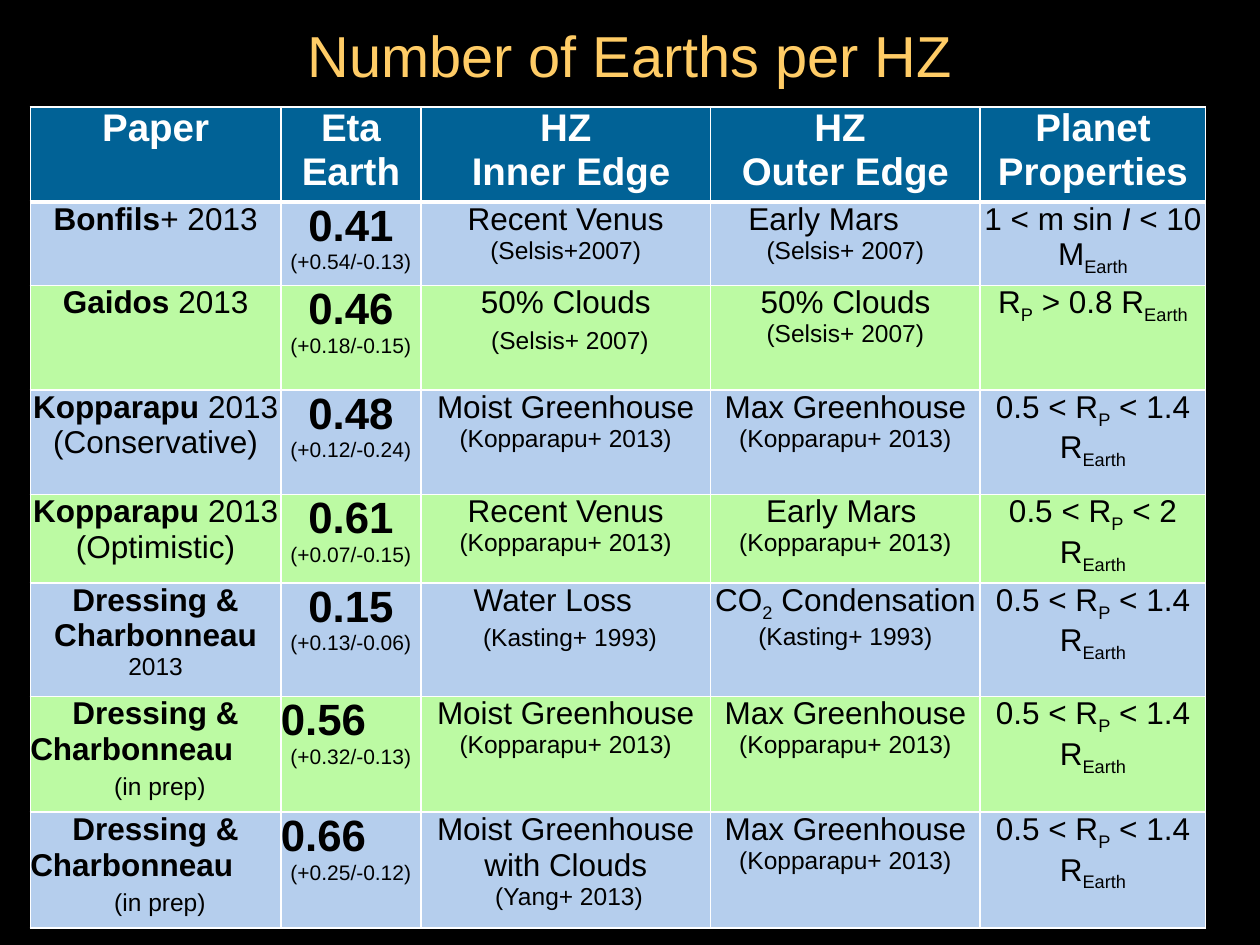
from lxml import etree
from pptx import Presentation
from pptx.dml.color import RGBColor
from pptx.enum.text import MSO_ANCHOR, PP_ALIGN
from pptx.oxml.ns import qn
from pptx.util import Inches, Pt

CENTER, LEFT = PP_ALIGN.CENTER, PP_ALIGN.LEFT
MIDDLE = MSO_ANCHOR.MIDDLE

TITLE = "Number of Earths per HZ"
HEADS = ["Paper", "Eta Earth", "HZ\n Inner Edge", "HZ \nOuter Edge", "Planet Properties"]
SMALL = "0.5 < R|_P| < 1.4 R|_Earth"
MOIST = "Moist Greenhouse\n~(Kopparapu+ 2013)"
MAX = "Max Greenhouse\n~(Kopparapu+ 2013)"
PREP = "*Dressing &\n*Charbonneau\n* |~(in prep)"

# Run marks: * bold, _ subscript, / italic, ~ reference, ^ value, ! error
ROWS = [
    ["*Bonfils|+ 2013", "^0.41\n!(+0.54/-0.13)", "Recent Venus\n~(Selsis+2007)",
     "Early Mars\n~(Selsis+ 2007)", "1 < m sin |/I |< 10 M|_Earth"],
    ["*Gaidos| 2013", "^0.46\n!(+0.18/-0.15)", "50% Clouds\n |~(Selsis+ 2007)",
     "50% Clouds\n~(Selsis+ 2007)", "R|_P| > 0.8 R|_Earth"],
    ["*Kopparapu| 2013 (Conservative)", "^0.48\n!(+0.12/-0.24)", MOIST, MAX, SMALL],
    ["*Kopparapu| 2013 (Optimistic)", "^0.61\n!(+0.07/-0.15)",
     "Recent Venus\n~(Kopparapu+ 2013)", "Early Mars\n~(Kopparapu+ 2013)",
     "0.5 < R|_P| < 2 R|_Earth"],
    ["*Dressing & Charbonneau |~2013", "^0.15\n!(+0.13/-0.06)",
     "Water Loss\n |~(Kasting+ 1993)",
     "CO|_2| Condensation\n~(Kasting+ 1993)", SMALL],
    [PREP, "^0.56\n!(+0.32/-0.13)", MOIST, MAX, SMALL],
    [PREP, "^0.66\n!(+0.25/-0.12)",
     "Moist Greenhouse with Clouds\n~ (Yang+ 2013)", MAX, SMALL],
]
SHIFTS = {(1, 3, 0): 0.3, (4, 3, 0): 0.44, (5, 2, 0): 0.42,
          (6, 0, 1): 0, (6, 1, 0): 0, (7, 0, 1): 0, (7, 1, 0): 0}
WIDTHS = [1.99, 1.11, 2.3, 2.14, 1.79]
HEIGHTS = [0.73, 0.62, 0.83, 0.83, 0.62, 0.9, 0.9, 0.91]
FILLS = ["BCFAA3", "B5CEED"]
STYLES = {"*": {"size": 18, "bold": True}, "_": {"size": 18},
          "/": {"size": 18, "italic": True}, "~": {"size": 14},
          "^": {"size": 25, "bold": True}, "!": {"size": 12}}
BODY = {"size": 18}
HEAD = {"size": 22, "bold": True}


def paint(tint):
    return RGBColor.from_string(tint)


def add_run(para, text, style, tint):
    run = para.add_run()
    run.text = text
    form = {"name": "Arial", "bold": False, "italic": False, **style}
    form["size"] = Pt(form["size"])
    for key, value in form.items():
        setattr(run.font, key, value)
    run.font.color.rgb = paint(tint)
    return run


def add_edge(cell, side, place, width):
    line = etree.Element(qn("a:ln" + side), w=str(Pt(width)))
    fill = etree.SubElement(line, qn("a:solidFill"))
    etree.SubElement(fill, qn("a:srgbClr"), val="FFFFFF")
    cell._tc.get_or_add_tcPr().insert(place, line)


def fill_cell(cell, text, row, col):
    form = {"margin_left": 0, "margin_right": 0, "margin_top": 0,
            "margin_bottom": Inches(0.02)}
    for key, value in form.items():
        setattr(cell, key, value)
    cell.fill.solid()
    cell.fill.fore_color.rgb = paint(FILLS[row % 2] if row else "016296")
    for place, side in enumerate("LRTB"):
        thick = (row, side) in [(0, "B"), (1, "T")]
        add_edge(cell, side, place, 3 if thick else 1)
    frame = cell.text_frame
    for num, line in enumerate(text.split("\n")):
        para = frame.add_paragraph() if num else frame.paragraphs[0]
        shift = SHIFTS.get((row, col, num))
        para.alignment = CENTER if shift is None else LEFT
        if shift:
            para._p.get_or_add_pPr().set("marL", str(Inches(shift)))
        for part in line.split("|"):
            mark = part[0]
            if row == 0:
                add_run(para, part, HEAD, "FFFFFF")
            elif mark in STYLES:
                run = add_run(para, part[1:], STYLES[mark], "000000")
                if mark == "_":
                    run._r.get_or_add_rPr().set("baseline", "-25000")
            else:
                add_run(para, part, BODY, "000000")


def main():
    deck = Presentation()
    deck.slide_width, deck.slide_height = Inches(10), Inches(7.5)
    slide = deck.slides.add_slide(deck.slide_layouts[6])
    back = slide.background.fill
    back.solid()
    back.fore_color.rgb = paint("000000")

    frame = slide.shapes.add_textbox(0, 0, deck.slide_width, Inches(0.87)).text_frame
    frame.word_wrap = True
    frame.vertical_anchor = MIDDLE
    frame.paragraphs[0].alignment = CENTER
    add_run(frame.paragraphs[0], TITLE, {"size": 33}, "FFCC66")

    grid = [HEADS] + ROWS
    table = slide.shapes.add_table(
        len(grid), len(HEADS), Inches(0.24), Inches(0.85),
        Inches(sum(WIDTHS)), Inches(sum(HEIGHTS))).table
    for col, width in zip(table.columns, WIDTHS):
        col.width = Inches(width)
    for row, height in zip(table.rows, HEIGHTS):
        row.height = Inches(height)
    for row, texts in enumerate(grid):
        for col, text in enumerate(texts):
            fill_cell(table.cell(row, col), text, row, col)
    deck.save("out.pptx")


if __name__ == "__main__":
    main()
